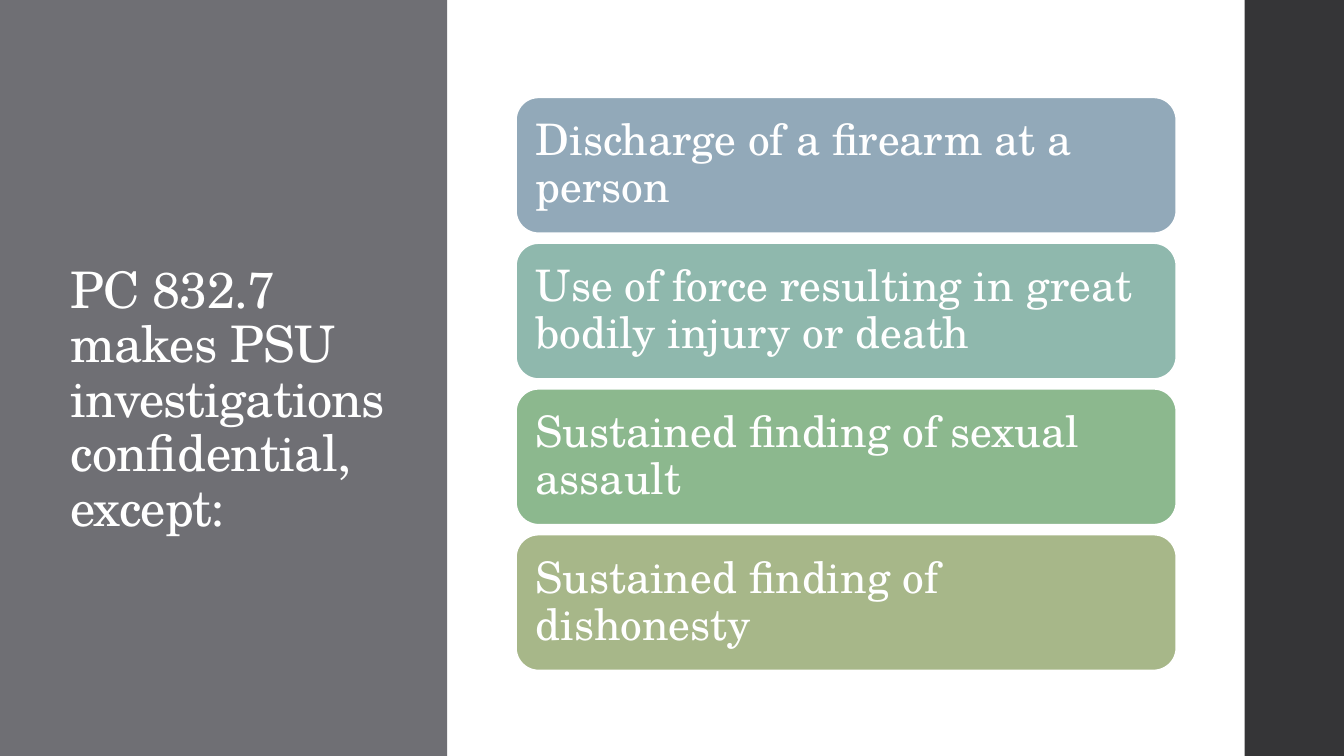
from pptx import Presentation
from pptx.dml.color import RGBColor
from pptx.enum.shapes import MSO_SHAPE as SHAPE
from pptx.enum.text import MSO_ANCHOR as ANCHOR, MSO_AUTO_SIZE as AUTO, PP_ALIGN as ALIGN
from pptx.util import Pt

WIDTH, HEIGHT = 960, 540
WHITE = "FFFFFF"
EXCEPTIONS = [
    ("Discharge of a firearm at a person", "92A9B9"),
    ("Use of force resulting in great bodily injury or death", "8FB8AD"),
    ("Sustained finding of sexual assault", "8CB88E"),
    ("Sustained finding of dishonesty", "A7B789"),
]


def rgb(color):
    return RGBColor.from_string(color)


class Deck:
    font = "TeX Gyre Schola"

    def __init__(self, prs):
        self.slide = prs.slides.add_slide(prs.slide_layouts[5])

    def shape(self, kind, x, y, w, h, fill):
        sp = self.slide.shapes.add_shape(kind, Pt(x), Pt(y), Pt(w), Pt(h))
        sp.shadow.inherit = False
        sp.fill.solid()
        sp.fill.fore_color.rgb = rgb(fill)
        sp.line.fill.background()
        return sp

    def set_text(self, sp, text, size):
        tf = sp.text_frame
        tf.text = text
        tf.word_wrap = True
        tf.auto_size = AUTO.NONE
        tf.vertical_anchor = ANCHOR.MIDDLE
        p = tf.paragraphs[0]
        p.alignment = ALIGN.LEFT
        p.line_spacing = 0.9
        p.font.name = self.font
        p.font.size = Pt(size)
        p.font.color.rgb = rgb(WHITE)
        return tf

    def panel(self, x, w, fill):
        sp = self.shape(SHAPE.RECTANGLE, x, 0, w, HEIGHT, fill)
        self.slide.shapes.title.element.addprevious(sp.element)

    def title(self, text, x, y, w, h):
        sp = self.slide.shapes.title
        sp.left, sp.top, sp.width, sp.height = Pt(x), Pt(y), Pt(w), Pt(h)
        tf = self.set_text(sp, text, 36)
        r = tf.paragraphs[0].runs[0]
        r._r.get_or_add_rPr().set("spc", "-50")

    def card(self, text, x, y, w, h, fill):
        sp = self.shape(SHAPE.ROUNDED_RECTANGLE, x, y, w, h, fill)
        sp.line.color.rgb = rgb(WHITE)
        sp.line.width = Pt(1.1)
        tf = self.set_text(sp, text, 31)
        tf.margin_left = tf.margin_right = Pt(9.3)
        tf.margin_top = tf.margin_bottom = Pt(9.3)


def main():
    prs = Presentation()
    prs.slide_width, prs.slide_height = Pt(WIDTH), Pt(HEIGHT)
    deck = Deck(prs)
    deck.panel(0, 319.5, "6F6F74")
    deck.panel(889, WIDTH - 889, "353537")
    deck.title("PC 832.7 makes PSU investigations confidential, except:", 43.2, 65.5, 242, 442)
    for i, (text, fill) in enumerate(EXCEPTIONS):
        deck.card(text, 368.6, 69.6 + i * 104.1, 471.6, 97, fill)
    prs.save("out.pptx")


if __name__ == "__main__":
    main()
